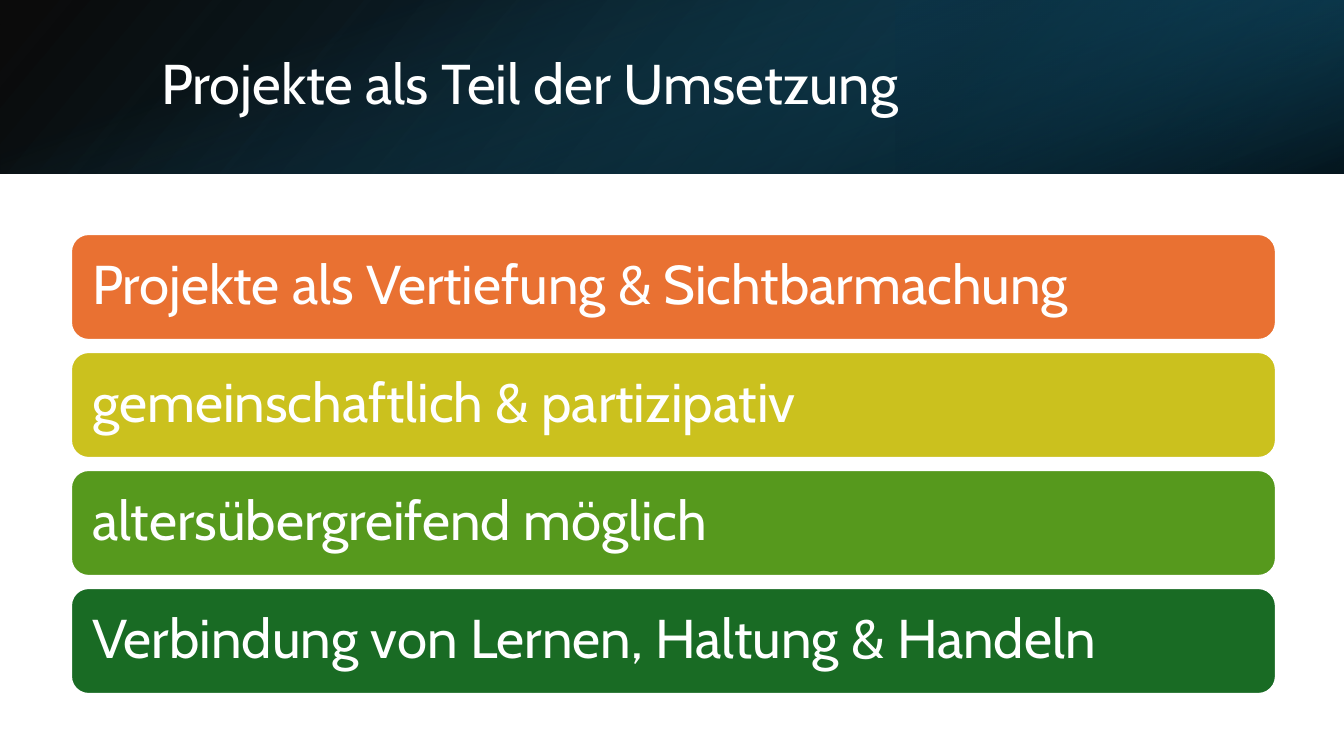
from dataclasses import dataclass

from lxml import etree
from pptx import Presentation
from pptx.dml.color import RGBColor
from pptx.enum import shapes, text
from pptx.oxml.ns import qn
from pptx.util import Emu, Pt

SCALE = 914400 / 100.8  # EMU per px


@dataclass(frozen=True)
class Theme:
    font: str = "Cabin"
    title_size: int = 40
    bar_size: int = 39
    white: str = "FFFFFF"
    black: str = "000000"
    deep_blue: str = "104862"
    night_blue: str = "0B3041"
    teal: str = "156082"
    bars: tuple = ("E97132", "CBC11E", "56991D", "196B24")


THEME = Theme()
BAR_TEXTS = (
    "Projekte als Vertiefung & Sichtbarmachung",
    "gemeinschaftlich & partizipativ",
    "altersübergreifend möglich",
    "Verbindung von Lernen, Haltung & Handeln",
)


def px(n):
    return Emu(round(n * SCALE))


def rgb(value):
    return RGBColor.from_string(value)


def add_gradient_panel(s, box, stops, angle, rotation=0, flip=False):
    """Stops are (position %, colour, opacity %); angle runs clockwise."""
    sp = s.shapes.add_shape(shapes.MSO_SHAPE.RECTANGLE, *map(px, box))
    sp.shadow.inherit = False
    sp.line.fill.background()
    sp.rotation = rotation
    if flip:
        sp._element.spPr.find(qn("a:xfrm")).set("flipH", "1")
    sp.fill.gradient()
    sp.fill.gradient_angle = 360 - angle
    for stop, (position, colour, opacity) in zip(sp.fill.gradient_stops, stops):
        stop.position = position / 100
        stop.color.rgb = rgb(colour)
        clr = stop._gs.find(qn("a:srgbClr"))
        etree.SubElement(clr, qn("a:alpha")).set("val", str(opacity * 1000))


def write_line(sp, content, size, inset):
    tf = sp.text_frame
    tf.word_wrap = True
    tf.vertical_anchor = text.MSO_ANCHOR.MIDDLE
    tf.margin_left = tf.margin_right = px(inset)
    tf.margin_top = tf.margin_bottom = px(5)
    p = tf.paragraphs[0]
    p.alignment = text.PP_ALIGN.LEFT
    p.line_spacing = 0.9
    r = p.add_run()
    r.text = content
    r.font.name = THEME.font
    r.font.size = Pt(size)
    r.font.color.rgb = rgb(THEME.white)


def add_title(s, content):
    sp = s.shapes.add_textbox(px(151), px(38), px(1107), px(97))
    write_line(sp, content, THEME.title_size, 10)


def add_bar(s, top, colour, content):
    sp = s.shapes.add_shape(shapes.MSO_SHAPE.ROUNDED_RECTANGLE,
                            px(71), px(top), px(1205), px(106))
    sp.shadow.inherit = False
    sp.fill.solid()
    sp.fill.fore_color.rgb = rgb(colour)
    sp.line.color.rgb = rgb(THEME.white)
    sp.line.width = Pt(1.5)
    write_line(sp, content, THEME.bar_size, 16)


def main():
    prs = Presentation()
    prs.slide_width, prs.slide_height = px(1344), px(756)
    s = prs.slides.add_slide(prs.slide_layouts[6])

    # Header band: three layered gradients
    add_gradient_panel(s, (0, 0, 1344, 174),
                       [(0, THEME.black, 96), (100, THEME.deep_blue, 100)],
                       140, flip=True)
    add_gradient_panel(s, (896, 0, 448, 174),
                       [(19, THEME.night_blue, 68), (100, THEME.teal, 79)],
                       320, rotation=180, flip=True)
    add_gradient_panel(s, (585, -585, 174, 1344),
                       [(23, THEME.teal, 0), (99, THEME.black, 74)],
                       340, rotation=90)
    add_title(s, "Projekte als Teil der Umsetzung")

    # Stacked statement bars
    for i, (colour, content) in enumerate(zip(THEME.bars, BAR_TEXTS)):
        add_bar(s, 234 + 118 * i, colour, content)

    prs.save("out.pptx")


if __name__ == "__main__":
    main()
